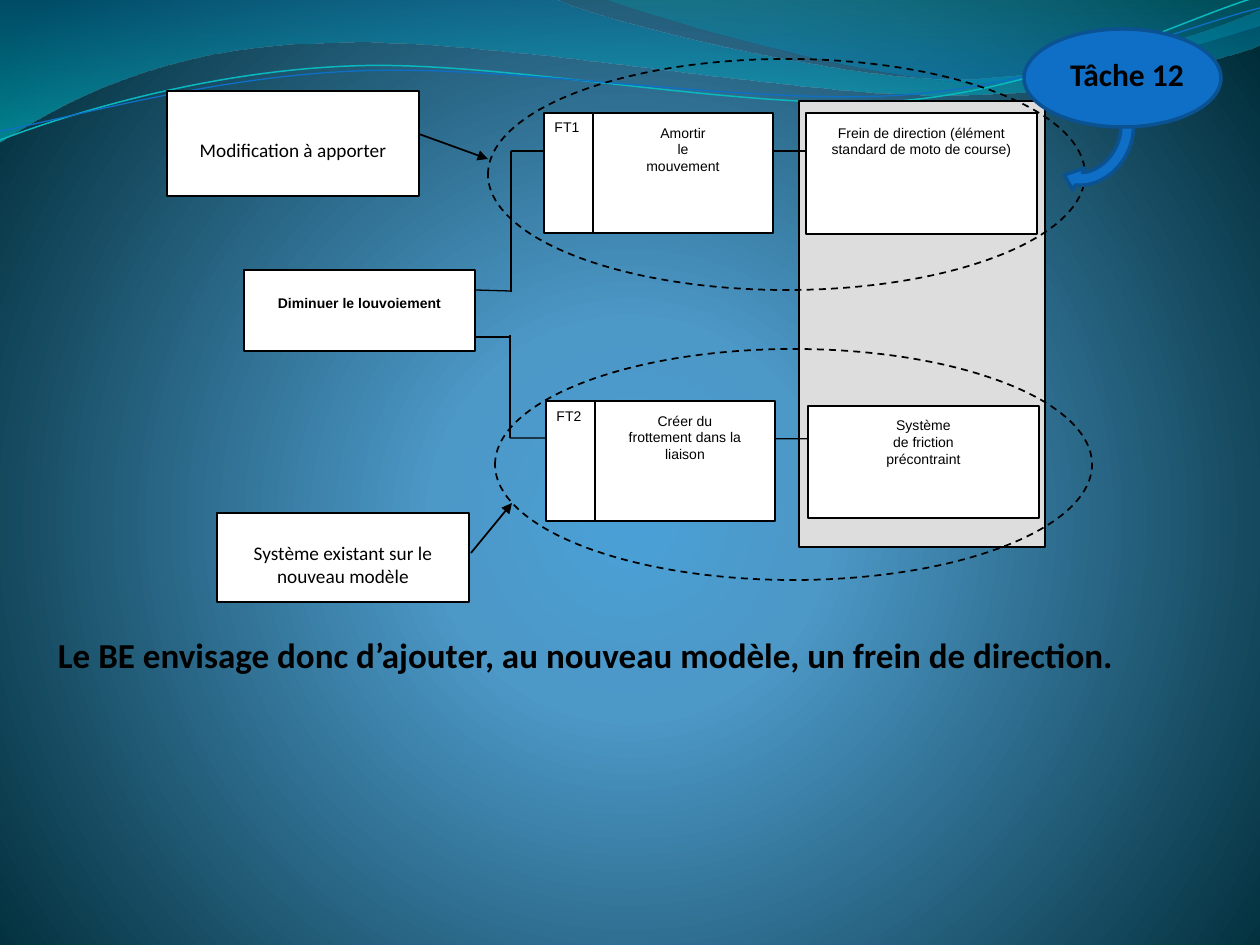
from lxml import etree
from pptx import Presentation
from pptx.dml.color import RGBColor
from pptx.enum.dml import MSO_LINE
from pptx.enum.shapes import MSO_CONNECTOR, MSO_SHAPE
from pptx.enum.text import MSO_ANCHOR, PP_ALIGN
from pptx.oxml.ns import qn
from pptx.util import Pt

RECT, OVAL, ARC = MSO_SHAPE.RECTANGLE, MSO_SHAPE.OVAL, MSO_SHAPE.CIRCULAR_ARROW
STRAIGHT, DASH = MSO_CONNECTOR.STRAIGHT, MSO_LINE.DASH
CENTER, LEFT, TOP = PP_ALIGN.CENTER, PP_ALIGN.LEFT, MSO_ANCHOR.TOP

PX = 914400 / 126
C = {"black": "000000", "white": "FFFFFF", "grey": "DDDDDD", "blue": "0F6FC6",
     "edge": "0B5292", "teal": "0AB8BF"}
RGB = {name: RGBColor.from_string(value) for name, value in C.items()}

SMALL = {"name": "Arial", "size": Pt(8), "bold": False}
STRONG = {**SMALL, "bold": True}
NOTE = {"name": "Calibri", "size": Pt(11), "bold": False}
TASK = {"name": "Calibri", "size": Pt(18), "bold": True}
CLAIM = {"name": "Calibri", "size": Pt(20), "bold": True}


def grade(fill, owner, stops):
    fill.gradient()
    grad = owner.find(".//" + qn("a:gradFill"))
    gs_list = grad.find(qn("a:gsLst"))
    for old in list(gs_list):
        gs_list.remove(old)
    for pos, color, alpha in stops:
        gs = etree.SubElement(gs_list, qn("a:gs"), pos=str(pos * 1000))
        clr = etree.SubElement(gs, qn("a:srgbClr"), val=color)
        if alpha < 100:
            etree.SubElement(clr, qn("a:alpha"), val=str(alpha * 1000))
    return grad


def write(sp, lines, font, align, margins, wrap=True):
    tf = sp.text_frame
    tf.word_wrap = wrap
    tf.vertical_anchor = TOP
    for side, value in zip(("left", "top", "right", "bottom"), margins):
        setattr(tf, "margin_" + side, round(value * PX))
    for i, line in enumerate(lines):
        p = tf.add_paragraph() if i else tf.paragraphs[0]
        p.alignment = align
        r = p.add_run()
        r.text = line
        r.font.color.rgb = RGB["black"]
        for key, value in font.items():
            setattr(r.font, key, value)


prs = Presentation()
prs.slide_width, prs.slide_height = round(1260 * PX), round(945 * PX)
s = prs.slides.add_slide(prs.slide_layouts[6])

grad = grade(s.background.fill, s.element,
             [(0, "4AA0D6", 100), (25, "4C98C7", 100), (100, "002C38", 100)])
grad.remove(grad.find(qn("a:lin")))
circle = etree.SubElement(grad, qn("a:path"), {"path": "circle"})
etree.SubElement(circle, qn("a:fillToRect"), l="10000", t="110000", r="10000", b="100000")

# Each wave: a start, then straight points (2 numbers) or Bézier curves (6 numbers).
waves = [
    ([(0, 0), (554, -1), (600, 21, 837, 79, 955, 79), (1075, 79, 1207, 33, 1260, 11),
      (1261, 45), (1239, 55, 1096, 96, 940, 95), (784, 95, 481, 35, 324, 43),
      (163, 45, 58, 105, -1, 142), (0, 0)],
     [(0, "0074A1", 45), (100, "00C6CF", 55)], None, 0),
    ([(604, -1), (641, 14, 859, 78, 969, 82), (1079, 87, 1211, 40, 1260, 26),
      (1260, 0), (604, -1)],
     [(0, "00A1A9", 30), (80, "008BBF", 45)], None, 0),
    ([(0, 140), (60, 117, 199, 72, 349, 66), (498, 59, 747, 112, 898, 101),
      (1050, 89, 1182, 19, 1257, -3)], None, "teal", 0.85),
    ([(0, 131), (59, 121, 207, 77, 357, 71), (508, 64, 752, 106, 903, 95),
      (1053, 84, 1186, 26, 1260, 8)], None, "blue", 0.75),
]
for steps, stops, color, width in waves:
    points = [(step[i], step[i + 1]) for step in steps for i in range(0, len(step), 2)]
    fb = s.shapes.build_freeform(*points[0], scale=PX)
    fb.add_line_segments(points[1:], close=bool(stops))
    sp = fb.convert_to_shape()
    segments = iter(list(sp.element.iter(qn("a:lnTo"))))
    for step in steps[1:]:
        first = next(segments)
        if len(step) == 6:
            first.tag = qn("a:cubicBezTo")
            for extra in (next(segments), next(segments)):
                first.append(extra[0])
                extra.getparent().remove(extra)
    sp.shadow.inherit = False
    if stops:
        grade(sp.fill, sp.element, stops)
        sp.fill.gradient_angle = 270
        sp.line.fill.background()
    else:
        sp.fill.background()
        sp.line.color.rgb = RGB[color]
        sp.line.width = Pt(width)

FT, FUNCTION, PLAIN = (10, 6, 13, 6), (13, 11, 13, 6), (13, 24, 13, 6)
column = (799, 101, 246, 446, "grey", 0.75, [], SMALL, FUNCTION)
boxes = [
    (593, 113, 180, 120, "white", 0.75, ["Amortir", "le", "mouvement"], SMALL, FUNCTION),
    (595, 401, 180, 120, "white", 0.75, ["Créer du", "frottement dans la liaison"],
     SMALL, FUNCTION),
    (808, 406, 231, 112, "white", 0.75, ["Système", "de friction", "précontraint"],
     SMALL, FUNCTION),
    (806, 113, 231, 121, "white", 0.75,
     ["Frein de direction (élément standard de moto de course)"], SMALL, FUNCTION),
    (244, 270, 231, 81, "white", 0.75, ["Diminuer le louvoiement"], STRONG, PLAIN),
    (544, 113, 49, 120, "white", 0.75, ["FT1"], SMALL, FT),
    (546, 401, 49, 120, "white", 0.75, ["FT2"], SMALL, FT),
    (217, 513, 252, 89, "white", 1, ["Système existant sur le nouveau modèle"],
     NOTE, (13, 28, 13, 6)),
    (167, 91, 252, 105, "white", 1, ["Modification à apporter"], NOTE, (13, 47, 13, 6)),
]
links = [
    (511, 151, 511, 292, 0.75, False),
    (511, 151, 872, 151, 0.75, False),
    (510, 438, 873, 439, 0.75, False),
    (475, 337, 510, 337, 0.75, False),
    (510, 335, 510, 438, 0.75, False),
    (476, 290, 510, 291, 0.75, False),
    (471, 553, 512, 503, 1, True),
    (419, 134, 488, 159, 1, True),
]
for item in [column, *links, *boxes]:
    if item in links:
        *ends, width, arrow = item
        link = s.shapes.add_connector(STRAIGHT, *(round(v * PX) for v in ends))
        link.line.color.rgb = RGB["black"]
        link.line.width = Pt(width)
        sp_pr = link.element.spPr
        if arrow:
            etree.SubElement(sp_pr.find(qn("a:ln")), qn("a:tailEnd"), type="triangle")
        etree.SubElement(sp_pr, qn("a:effectLst"))
        continue
    *place, color, width, lines, font, margins = item
    sp = s.shapes.add_shape(RECT, *(round(v * PX) for v in place))
    sp.shadow.inherit = False
    sp.fill.solid()
    sp.fill.fore_color.rgb = RGB[color]
    sp.line.color.rgb = RGB["black"]
    sp.line.width = Pt(width)
    write(sp, lines, font, CENTER, margins)

rounds = [
    (OVAL, 495, 349, 597, 231, 0, None, "black", 1, DASH),
    (OVAL, 488, 59, 597, 231, 0, None, "black", 1, DASH),
    (ARC, 1028, 84, 118, 101, 119.5, "blue", "edge", 2, None),
    (OVAL, 1024, 29, 197, 98, 0, "blue", "edge", 2, None),
]
for kind, x, y, w, h, turn, color, edge, width, dash in rounds:
    sp = s.shapes.add_shape(kind, *(round(v * PX) for v in (x, y, w, h)))
    sp.shadow.inherit = False
    sp.rotation = turn
    if color:
        sp.fill.solid()
        sp.fill.fore_color.rgb = RGB[color]
    else:
        sp.fill.background()
    sp.line.color.rgb = RGB[edge]
    sp.line.width = Pt(width)
    if dash:
        sp.line.dash_style = dash

texts = [
    (39, 627, 1172, 93, "Le BE envisage donc d’ajouter, au nouveau modèle, un frein de direction.",
     CLAIM, LEFT, (19, 6, 13, 6), True),
    (1057, 49, 140, 50, "Tâche 12", TASK, CENTER, (13, 6, 13, 6), False),
]
for x, y, w, h, text, font, align, margins, wrap in texts:
    tb = s.shapes.add_textbox(*(round(v * PX) for v in (x, y, w, h)))
    write(tb, [text], font, align, margins, wrap)

prs.save("out.pptx")
